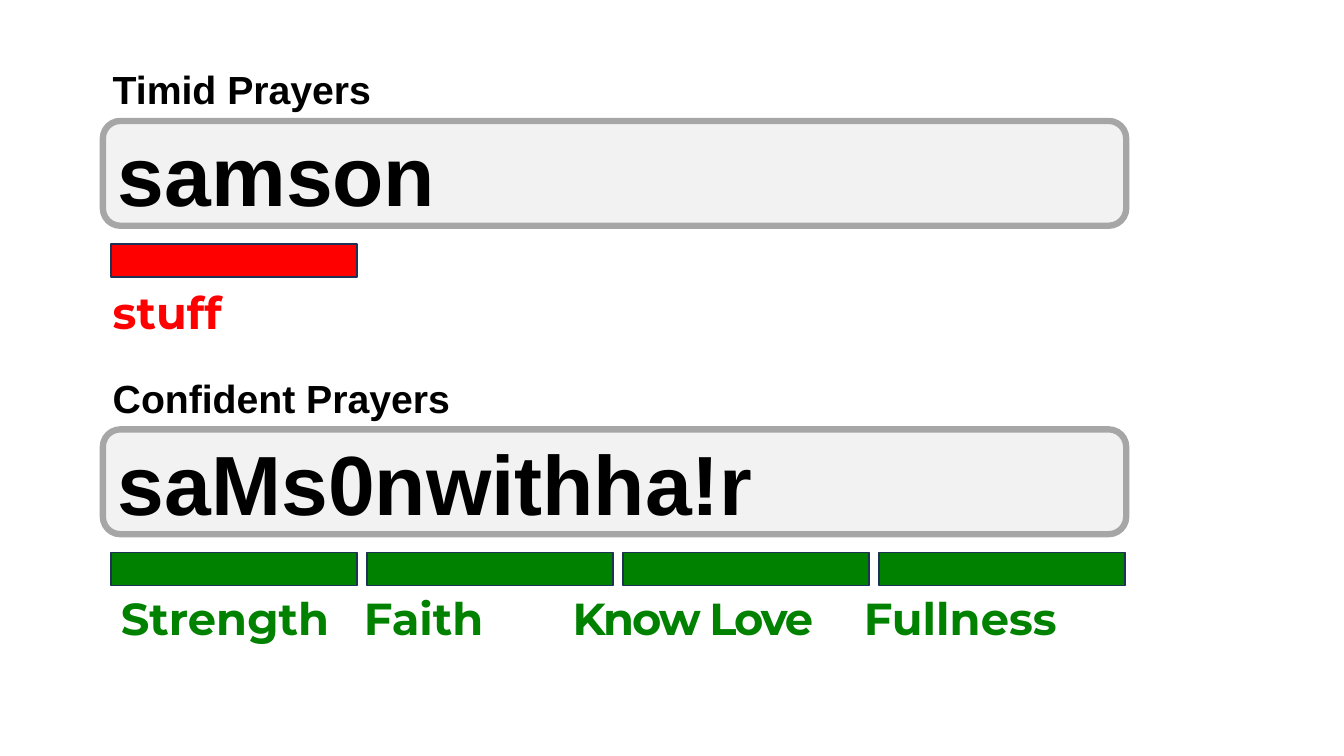
import dataclasses

import pptx
import pptx.dml.color
import pptx.enum.shapes
import pptx.enum.text
import pptx.oxml.ns
import pptx.util
from lxml import etree

Inches = pptx.util.Inches
RGBColor = pptx.dml.color.RGBColor
MSO_SHAPE = pptx.enum.shapes.MSO_SHAPE

BLACK = RGBColor(0x00, 0x00, 0x00)
RED = RGBColor(0xFF, 0x00, 0x00)
GREEN = RGBColor(0x00, 0x82, 0x00)
NAVY = RGBColor(0x1E, 0x32, 0x56)
PALE_GREY = RGBColor(0xF2, 0xF2, 0xF2)
MID_GREY = RGBColor(0xA6, 0xA6, 0xA6)

LEFT = 1.02
BAR_LEFT = 1.1
BAR_PITCH = 2.54
LABEL_TABS = (2.41, 4.48, 7.37)


@dataclasses.dataclass(frozen=True)
class Prayer:
    top: float
    title: str
    password: str
    color: RGBColor
    bars: int


PRAYERS = (
    Prayer(0.6, "Timid Prayers", "samson", RED, 1),
    Prayer(3.66, "Confident Prayers", "saMs0nwithha!r", GREEN, 4),
)


def add_run(p, text: str, *, size: float, color: RGBColor, font: str = "Arial",
            spacing: float = 0) -> None:
    r = p.add_run()
    r.text = text
    r.font.size = pptx.util.Pt(size)
    r.font.bold = True
    r.font.name = font
    r.font.color.rgb = color
    if spacing:
        r.font._element.set("spc", str(int(spacing * 100)))


def add_box(s, x: float, y: float, w: float, h: float):
    tf = s.shapes.add_textbox(Inches(x), Inches(y), Inches(w), Inches(h)).text_frame
    tf.word_wrap = True
    return tf.paragraphs[0]


def add_block(s, kind, x: float, y: float, w: float, h: float, *,
              fill: RGBColor, line: RGBColor, weight: float):
    sp = s.shapes.add_shape(kind, Inches(x), Inches(y), Inches(w), Inches(h))
    sp.shadow.inherit = False
    sp.fill.solid()
    sp.fill.fore_color.rgb = fill
    sp.line.color.rgb = line
    sp.line.width = pptx.util.Pt(weight)
    return sp


def add_tabs(p, stops: tuple[float, ...]) -> None:
    qn = pptx.oxml.ns.qn
    tabs = etree.SubElement(p._p.get_or_add_pPr(), qn("a:tabLst"))
    for stop in stops:
        etree.SubElement(tabs, qn("a:tab"), pos=str(Inches(stop)), algn="l")


def draw_prayer(s, prayer: Prayer) -> None:
    add_run(add_box(s, LEFT, prayer.top, 6.67, 0.57), prayer.title, size=28, color=BLACK)
    field = add_block(s, MSO_SHAPE.ROUNDED_RECTANGLE, LEFT, prayer.top + 0.6, 10.15, 1.04,
                      fill=PALE_GREY, line=MID_GREY, weight=4.5)
    tf = field.text_frame
    tf.vertical_anchor = pptx.enum.text.MSO_ANCHOR.MIDDLE
    p = tf.paragraphs[0]
    p.alignment = pptx.enum.text.PP_ALIGN.LEFT
    add_run(p, prayer.password, size=60, color=BLACK)
    for i in range(prayer.bars):
        add_block(s, MSO_SHAPE.RECTANGLE, BAR_LEFT + i * BAR_PITCH, prayer.top + 1.82,
                  2.44, 0.33, fill=prayer.color, line=NAVY, weight=1)


def main() -> None:
    prs = pptx.Presentation()
    prs.slide_width, prs.slide_height = Inches(13.33), Inches(7.5)
    s = prs.slides.add_slide(prs.slide_layouts[6])
    for prayer in PRAYERS:
        draw_prayer(s, prayer)
    add_run(add_box(s, LEFT, 2.78, 6.67, 0.64), "stuff", size=32, color=RED, font="Montserrat")
    p = add_box(s, BAR_LEFT, 5.81, 10.82, 0.64)
    add_tabs(p, LABEL_TABS)
    for text, spacing in (("Strength\tFaith\t", 0), ("Know Love", -1.5), ("\tFullness", 0)):
        add_run(p, text, size=32, color=GREEN, font="Montserrat", spacing=spacing)
    prs.save("out.pptx")


if __name__ == "__main__":
    main()
